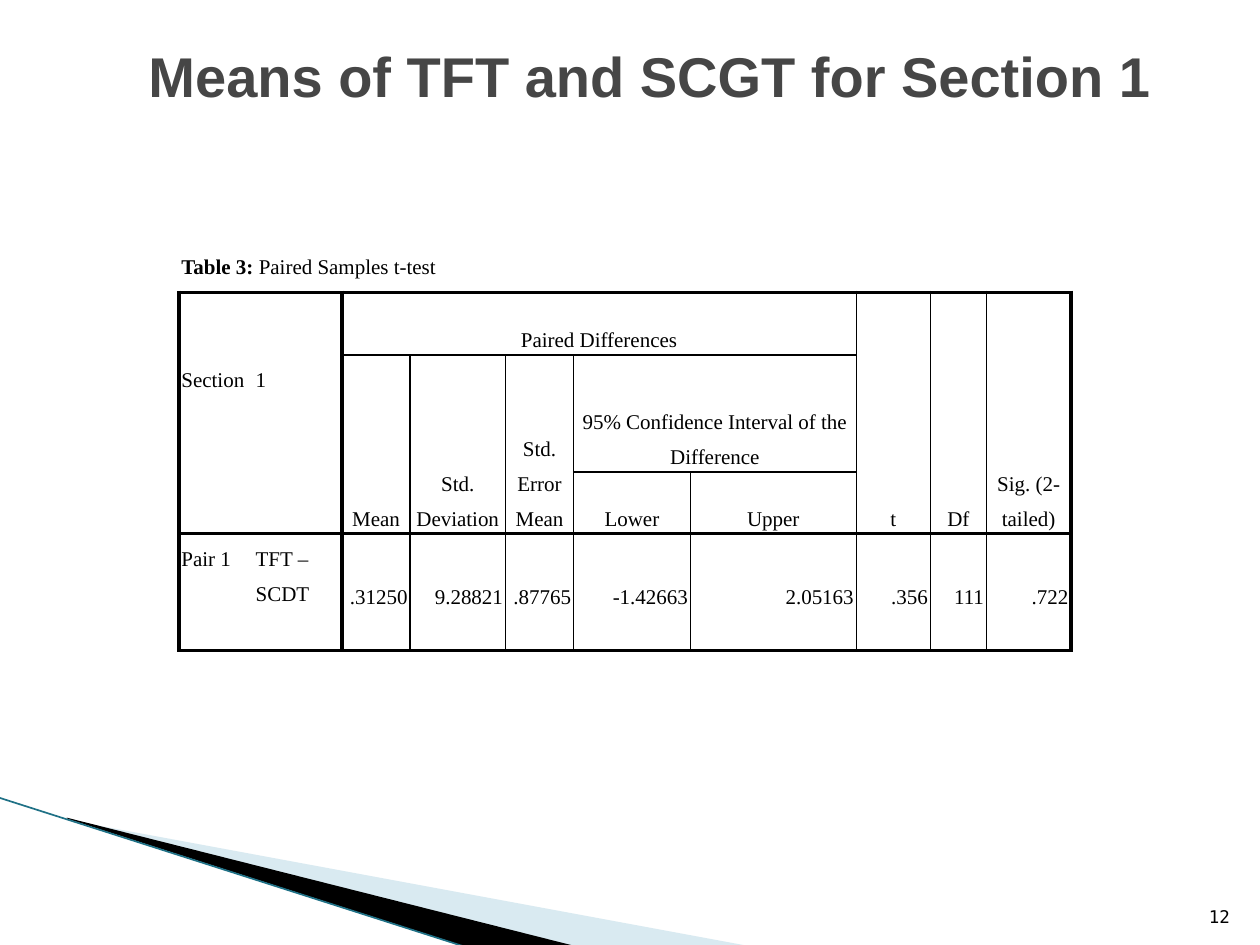
from dataclasses import dataclass
from itertools import product

from lxml.etree import SubElement
from pptx import Presentation
from pptx.dml.color import RGBColor
from pptx.enum.text import MSO_ANCHOR, PP_ALIGN
from pptx.oxml.ns import qn
from pptx.util import Emu, Inches, Pt

INK = {"text": "000000", "title": "464646", "paper": "FFFFFF",
       "pale": "A0CBDC", "edge": "1F7186"}
SERIF = "Times New Roman"
LEFT, MID, RIGHT = PP_ALIGN.LEFT, PP_ALIGN.CENTER, PP_ALIGN.RIGHT
TOP, HALF, LOW = MSO_ANCHOR.TOP, MSO_ANCHOR.MIDDLE, MSO_ANCHOR.BOTTOM

# Table grid, in percent of the slide's width and height
COLS = [5.9, 7.05, 5.4, 7.58, 5.4, 9.28, 13.16, 5.88, 4.46, 6.7]
ROWS = [6.55, 6.6, 12.4, 6.53, 12.35]
THICK, THIN = 2.25, 1


@dataclass
class Item:
    row: int
    col: int
    text: str
    high: int = 1
    wide: int = 1
    align: PP_ALIGN = MID
    anchor: MSO_ANCHOR = LOW


@dataclass
class Wedge:
    frame: tuple
    points: list
    fill: str
    alpha: int = 100


HEADS = [
    Item(1, 2, "Paired Differences", wide=5),
    Item(1, 7, "t", high=3),
    Item(1, 8, "Df", high=3),
    Item(1, 9, "Sig. (2-tailed)", high=3),
    Item(2, 2, "Mean", high=2),
    Item(2, 3, "Std. Deviation", high=2),
    Item(2, 4, "Std. Error Mean", high=2),
    Item(2, 5, "95% Confidence Interval of the Difference", wide=2),
    Item(3, 5, "Lower"),
    Item(3, 6, "Upper"),
]
SIDES = [Item(row, col, text, align=LEFT, anchor=TOP) for row, col, text in [
    (1, 0, ""), (1, 1, ""), (2, 0, "Section"), (2, 1, "1"),
    (3, 0, ""), (3, 1, ""), (4, 0, "Pair 1"), (4, 1, "TFT – SCDT")]]
DATA = [Item(4, col, text, align=RIGHT, anchor=HALF) for col, text in enumerate(
    [".31250", "9.28821", ".87765", "-1.42663", "2.05163", ".356", "111", ".722"], 2)]
TITLE = Item(0, 0, "", wide=10, align=LEFT, anchor=HALF)

WEDGES = [
    Wedge((7.8, 72.93, 41.6, 21.07),
          [(5.5, 86.8), (59.5, 100.13), (45.6, 100.13), (5.5, 86.67)], "pale", 40),
    Wedge((-0.6, 84.4, 41.6, 12.27),
          [(5.3, 86.53), (45.7, 100.13), (37.2, 100.27), (5.4, 86.67)], "text"),
]

deck = Presentation()
deck.slide_width, deck.slide_height = Inches(10), Inches(7.5)
slide = deck.slides.add_slide(deck.slide_layouts[6])


def across(share: float) -> Emu:
    return Emu(round(deck.slide_width * share / 100))


def down(share: float) -> Emu:
    return Emu(round(deck.slide_height * share / 100))


def write(frame, text: str, *, font: str = SERIF, size: float = 12, ink: str = "text",
          bold: bool = False, align: PP_ALIGN = LEFT, space: float = 1.0) -> None:
    """Add a run to the first paragraph of a frame."""
    para = frame.paragraphs[0]
    para.alignment, para.line_spacing = align, space
    run = para.add_run()
    run.text = text
    run.font.name, run.font.size, run.font.bold = font, Pt(size), bold
    run.font.color.rgb = RGBColor.from_string(INK[ink])


def label(left: float, top: float, wide: float, high: float, text: str,
          anchor: MSO_ANCHOR, **style) -> None:
    box = slide.shapes.add_textbox(across(left), down(top), across(wide), down(high))
    frame = box.text_frame
    frame.word_wrap, frame.vertical_anchor = True, anchor
    write(frame, text, **style)


def wedge(part: Wedge) -> None:
    """Draw an outline whose points may reach beyond its frame."""
    points = [(across(x), down(y)) for x, y in part.points]
    pen = slide.shapes.build_freeform(*points[0])
    pen.add_line_segments(points[1:])
    shape = pen.convert_to_shape()
    left, top, wide, high = part.frame
    shape.left, shape.top = across(left), down(top)
    shape.width, shape.height = across(wide), down(high)
    track = shape._element.spPr.find(".//" + qn("a:path"))
    track.set("w", str(shape.width))
    track.set("h", str(shape.height))
    for spot, (x, y) in zip(track.iter(qn("a:pt")), points + points[:1]):
        spot.set("x", str(x - shape.left))
        spot.set("y", str(y - shape.top))
    shape.shadow.inherit = False
    shape.line.fill.background()
    shape.fill.solid()
    shape.fill.fore_color.rgb = RGBColor.from_string(INK[part.fill])
    if part.alpha < 100:
        tint = shape.fill._xPr.find(".//" + qn("a:srgbClr"))
        SubElement(tint, qn("a:alpha"), val=str(part.alpha * 1000))


def border(cell, side: str, width: float) -> None:
    line = SubElement(cell._tc.get_or_add_tcPr(), qn("a:ln" + side), w=str(Pt(width)))
    if width:
        fill = SubElement(line, qn("a:solidFill"))
        SubElement(fill, qn("a:srgbClr"), val=INK["text"])
    else:
        SubElement(line, qn("a:noFill"))


def upright(row: int, col: int) -> float:
    """Width of the vertical rule at a column line."""
    if row == 0 or col == 1:
        return 0
    return THICK if col in (0, 2, len(COLS)) else THIN


def level(row: int, col: int) -> float:
    """Width of the horizontal rule at a row line."""
    if row == 0 or (col < 2 and row in (2, 3)):
        return 0
    return THICK if row in (1, 4, 5) else THIN


def fill(grid, item: Item) -> None:
    cell = grid.cell(item.row, item.col)
    end, edge = item.row + item.high, item.col + item.wide
    if item.high * item.wide > 1:
        cell.merge(grid.cell(end - 1, edge - 1))
    for row, col in product(range(item.row, end), range(item.col, edge)):
        part = grid.cell(row, col)
        border(part, "L", upright(row, col) if col == item.col else 0)
        border(part, "R", upright(row, col + 1) if col == edge - 1 else 0)
        border(part, "T", level(row, col) if row == item.row else 0)
        border(part, "B", level(row + 1, col) if row == end - 1 else 0)
        part.fill.solid()
        part.fill.fore_color.rgb = RGBColor.from_string(INK["paper"])
    cell.margin_left = cell.margin_right = Inches(0.02)
    cell.margin_top = cell.margin_bottom = Inches(0.02)
    cell.vertical_anchor = item.anchor
    if item.text:
        write(cell.text_frame, item.text, align=item.align, space=1.5)


# Corner decoration
for part in WEDGES:
    wedge(part)
rule = slide.shapes.add_connector(1, across(-0.1), down(84.4), across(37.1), down(100.27))
rule.line.color.rgb = RGBColor.from_string(INK["edge"])
rule.line.width = Pt(0.95)
SubElement(rule._element.spPr, qn("a:effectLst"))

# Title and slide number
label(10.8, 3.7, 84.2, 16.67, "Means of TFT and SCGT for Section 1", TOP,
      font="Arial", size=32, ink="title", bold=True)
label(94.6, 93.47, 4, 5.33, "12", LOW, font="DejaVu Sans Mono", size=10, align=RIGHT)

# Table of the paired t-test
grid = slide.shapes.add_table(len(ROWS), len(COLS), across(14.2), down(24.4),
                              across(sum(COLS)), down(sum(ROWS))).table
grid.first_row = grid.horz_banding = False
for col, share in zip(grid.columns, COLS):
    col.width = across(share)
for row, share in zip(grid.rows, ROWS):
    row.height = down(share)
for item in [TITLE, *HEADS, *SIDES, *DATA]:
    fill(grid, item)
head = grid.cell(0, 0).text_frame
write(head, "Table 3: ", bold=True, space=1.5)
write(head, "Paired Samples t-test", space=1.5)

deck.save("out.pptx")
